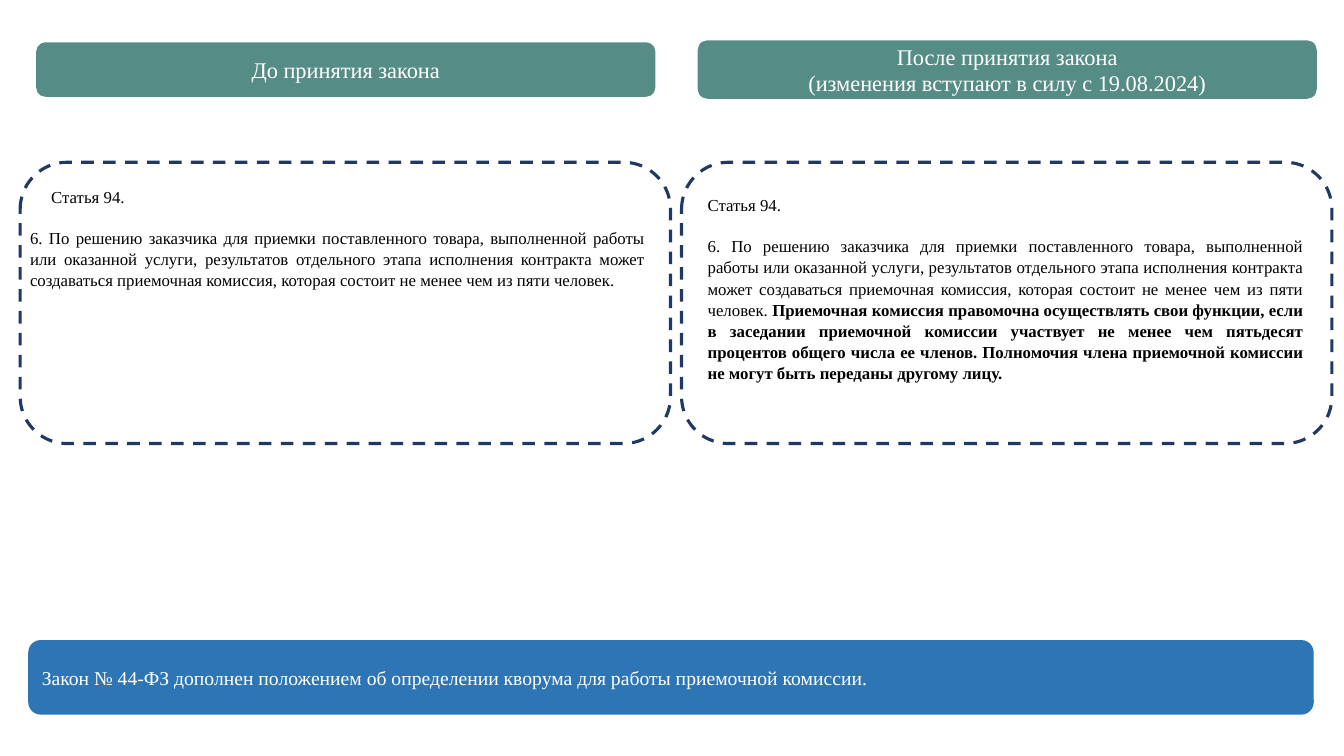
import pptx
import pptx.dml.color
import pptx.enum.dml
import pptx.enum.shapes
import pptx.enum.text
import pptx.util

Inches = pptx.util.Inches
Pt = pptx.util.Pt
RGBColor = pptx.dml.color.RGBColor
Align = pptx.enum.text.PP_ALIGN

WHITE = RGBColor(0xFF, 0xFF, 0xFF)
BLACK = RGBColor(0x00, 0x00, 0x00)
GREEN = RGBColor(0x56, 0x8C, 0x86)
BLUE = RGBColor(0x2E, 0x75, 0xB6)
NAVY = RGBColor(0x20, 0x38, 0x64)

ARTICLE = "Статья 94."
OLD_RULE = (
    "6. По решению заказчика для приемки поставленного товара, выполненной работы "
    "или оказанной услуги, результатов отдельного этапа исполнения контракта может "
    "создаваться приемочная комиссия, которая состоит не менее чем из пяти человек."
)
NEW_RULE = (
    "Приемочная комиссия правомочна осуществлять свои функции, если в заседании "
    "приемочной комиссии участвует не менее чем пятьдесят процентов общего числа ее "
    "членов. Полномочия члена приемочной комиссии не могут быть переданы другому лицу."
)
SUMMARY = "Закон № 44-ФЗ дополнен положением об определении кворума для работы приемочной комиссии."


def add_run(paragraph, text, size=12, color=BLACK, bold=False, font="Times New Roman"):
    run = paragraph.add_run()
    run.text = text
    run.font.name = font
    run.font.size = Pt(size)
    run.font.color.rgb = color
    run.font.bold = bold


class ComparisonSlide:
    def __init__(self, slide):
        self.slide = slide

    def rounded_box(self, left, top, width, height):
        shape = self.slide.shapes.add_shape(
            pptx.enum.shapes.MSO_SHAPE.ROUNDED_RECTANGLE,
            Inches(left), Inches(top), Inches(width), Inches(height),
        )
        shape.shadow.inherit = False
        return shape

    def banner(self, box, lines, fill, size, alignment):
        shape = self.rounded_box(*box)
        shape.fill.solid()
        shape.fill.fore_color.rgb = fill
        shape.line.fill.background()
        frame = shape.text_frame
        frame.word_wrap = True
        frame.vertical_anchor = pptx.enum.text.MSO_ANCHOR.MIDDLE
        for index, line in enumerate(lines):
            paragraph = frame.add_paragraph() if index else frame.paragraphs[0]
            paragraph.alignment = alignment
            add_run(paragraph, line, size=size, color=WHITE)

    def dashed_frame(self, left, top, width, height):
        shape = self.rounded_box(left, top, width, height)
        shape.fill.background()
        shape.line.color.rgb = NAVY
        shape.line.width = Pt(2.25)
        shape.line.dash_style = pptx.enum.dml.MSO_LINE.DASH

    def article(self, left, top, width, height, rule, addition="", title_indent=0):
        """Article title, then the rule with its addition in bold."""
        box = self.slide.shapes.add_textbox(
            Inches(left), Inches(top), Inches(width), Inches(height)
        )
        frame = box.text_frame
        frame.word_wrap = True
        title, body = frame.paragraphs[0], frame.add_paragraph()
        for paragraph in (title, body):
            paragraph.alignment = Align.JUSTIFY
            paragraph.line_spacing = 1.05
        title._p.get_or_add_pPr().set("indent", str(Inches(title_indent)))
        body.space_before = Pt(14.5)
        add_run(title, ARTICLE)
        add_run(body, rule)
        if addition:
            add_run(body, " " + addition, bold=True)


def main():
    presentation = pptx.Presentation()
    presentation.slide_width = Inches(13.33)
    presentation.slide_height = Inches(7.5)
    page = ComparisonSlide(presentation.slides.add_slide(presentation.slide_layouts[6]))

    page.banner((0.36, 0.42, 6.14, 0.54), ["До принятия закона"], GREEN, 16, Align.CENTER)
    page.banner(
        (6.92, 0.4, 6.14, 0.58),
        ["После принятия закона", "(изменения вступают в силу с 19.08.2024)"],
        GREEN, 16, Align.CENTER,
    )
    for left in (0.2, 6.76):
        page.dashed_frame(left, 1.61, 6.45, 2.79)
    page.banner((0.28, 6.35, 12.75, 0.74), [SUMMARY], BLUE, 14, Align.JUSTIFY)
    page.article(6.92, 1.87, 6.11, 2.12, OLD_RULE, addition=NEW_RULE)
    page.article(0.2, 1.79, 6.3, 1.31, OLD_RULE, title_indent=0.21)

    presentation.save("out.pptx")


if __name__ == "__main__":
    main()
